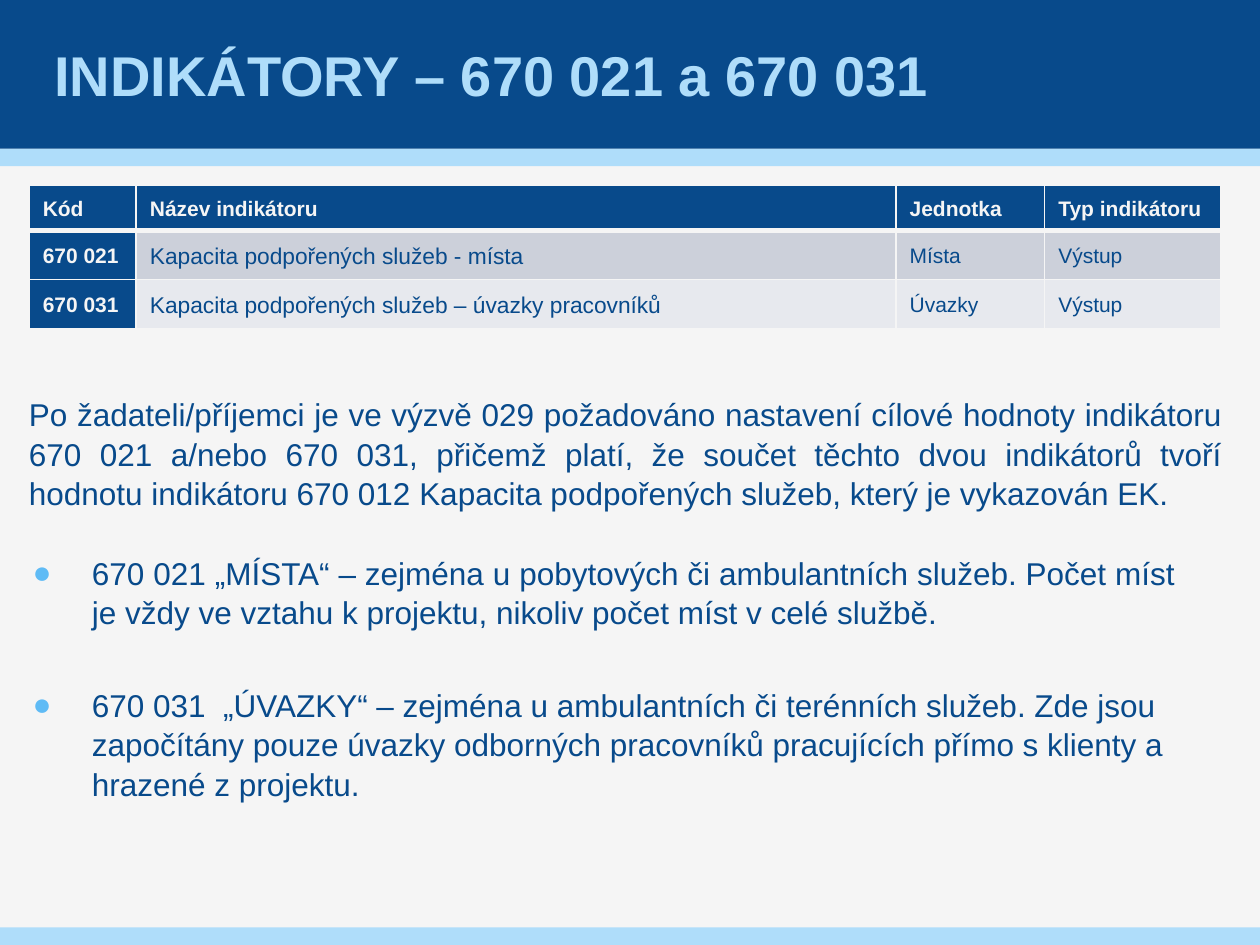
"""Builds the slide on indicators 670 021 and 670 031."""
from lxml import etree
from pptx import Presentation
from pptx import util as u
from pptx.dml.color import RGBColor
from pptx.enum import shapes, text
from pptx.oxml import ns

NAVY = RGBColor(0x08, 0x4A, 0x8B)
SKY = RGBColor(0xAF, 0xDD, 0xFA)
BULLET = RGBColor(0x5F, 0xBB, 0xF5)
PAPER = RGBColor(0xF5, 0xF5, 0xF5)
BANDS = [RGBColor(0xCC, 0xD0, 0xDA), RGBColor(0xE7, 0xE9, 0xEE)]
WIDTH, HEIGHT = u.Inches(10), u.Inches(7.5)
HEADER, STRIPE = u.Inches(1.18), u.Inches(0.14)
MARGIN = u.Inches(0.23)


def write(frame, words, size=18, color=NAVY, bold=False, align=text.PP_ALIGN.LEFT,
          before=0, after=0, spacing=1.0, indent=0, hanging=0, bullet=None, first=True):
    """Writes one formatted paragraph into a text frame."""
    para = frame.paragraphs[0] if first else frame.add_paragraph()
    para.alignment, para.line_spacing = align, spacing
    para.space_before, para.space_after = u.Pt(before), u.Pt(after)
    props = para._p.get_or_add_pPr()
    props.set("marL", str(u.Inches(indent)))
    props.set("indent", str(-u.Inches(hanging)))
    if bullet:
        paint = etree.SubElement(props, ns.qn("a:buClr"))
        etree.SubElement(paint, ns.qn("a:srgbClr"), val=str(BULLET))
        etree.SubElement(props, ns.qn("a:buFont"), typeface="Arial")
        etree.SubElement(props, ns.qn("a:buChar"), char=bullet)
    span = para.add_run()
    span.text = words
    span.font.name, span.font.size, span.font.bold = "Arial", u.Pt(size), bold
    span.font.color.rgb = color


def set_margins(target, side=0):
    """Sets equal side margins and no margin above or below."""
    target.margin_left = target.margin_right = u.Inches(side)
    target.margin_top = target.margin_bottom = 0


deck = Presentation()
deck.slide_width, deck.slide_height = WIDTH, HEIGHT
page = deck.slides.add_slide(deck.slide_layouts[5])
page.background.fill.solid()
page.background.fill.fore_color.rgb = PAPER

for top, height, color in [(HEADER, STRIPE, SKY), (0, HEADER, NAVY), (HEIGHT - STRIPE, STRIPE, SKY)]:
    band = page.shapes.add_shape(shapes.MSO_SHAPE.RECTANGLE, 0, top, WIDTH, height)
    band.shadow.inherit = False
    band.fill.solid()
    band.fill.fore_color.rgb = color
    band.line.fill.background()

title = page.shapes.title
title.left, title.top, title.width, title.height = u.Inches(0.39), 0, u.Inches(9.21), HEADER
page.shapes._spTree.append(title._element)
set_margins(title.text_frame, 0.04)
title.text_frame.vertical_anchor = text.MSO_ANCHOR.MIDDLE
write(title.text_frame, "INDIKÁTORY – 670 021 a 670 031", size=32, color=SKY, bold=True)

rows = [
    ["Kód", "Název indikátoru", "Jednotka", "Typ indikátoru"],
    ["670 021", "Kapacita podpořených služeb - místa", "Místa", "Výstup"],
    ["670 031", "Kapacita podpořených služeb – úvazky pracovníků", "Úvazky", "Výstup"],
]
columns = [0.85, 6.03, 1.18, 1.4]
heights = [0.36, 0.39, 0.39]
table = page.shapes.add_table(len(rows), len(columns), MARGIN, u.Inches(1.47),
                              u.Inches(sum(columns)), u.Inches(sum(heights))).table
for column, width in zip(table.columns, columns):
    column.width = u.Inches(width)
for r, (words_in_row, height) in enumerate(zip(rows, heights)):
    table.rows[r].height = u.Inches(height)
    for c, words in enumerate(words_in_row):
        cell = table.cell(r, c)
        heading = r == 0 or c == 0
        set_margins(cell, 0.07)
        cell.vertical_anchor = text.MSO_ANCHOR.MIDDLE
        cell.fill.solid()
        cell.fill.fore_color.rgb = NAVY if heading else BANDS[r - 1]
        write(cell.text_frame, words, size=13 if c == 1 and r else 12, bold=heading,
              color=PAPER if heading else NAVY, before=3, after=6, spacing=1.1, indent=0.04)
        props = cell._tc.get_or_add_tcPr()
        for place, side in enumerate("LRTB"):
            thick = (r, side) in [(0, "B"), (1, "T")]
            border = etree.Element(ns.qn("a:ln" + side), w=str(u.Pt(3 if thick else 1)))
            paint = etree.SubElement(border, ns.qn("a:solidFill"))
            etree.SubElement(paint, ns.qn("a:srgbClr"), val=str(PAPER))
            props.insert(place, border)

intro = page.shapes.add_textbox(MARGIN, u.Inches(3.12), u.Inches(9.47), u.Inches(1.15))
points = page.shapes.add_textbox(u.Inches(0.26), u.Inches(4.38), u.Inches(9.07), u.Inches(2.98))
for box in (intro, points):
    box.text_frame.word_wrap = True
    set_margins(box.text_frame)

write(intro.text_frame,
      "Po žadateli/příjemci je ve výzvě 029 požadováno nastavení cílové hodnoty indikátoru "
      "670 021 a/nebo 670 031, přičemž platí, že součet těchto dvou indikátorů tvoří "
      "hodnotu indikátoru 670 012 Kapacita podpořených služeb, který je vykazován EK.",
      align=text.PP_ALIGN.JUSTIFY, after=12, spacing=1.05)
write(points.text_frame,
      "670 021 „MÍSTA“ – zejména u pobytových či ambulantních služeb. Počet míst "
      "je vždy ve vztahu k projektu, nikoliv počet míst v celé službě.",
      align=text.PP_ALIGN.JUSTIFY, after=24, spacing=1.05, indent=0.47, hanging=0.47, bullet="●")
write(points.text_frame,
      "670 031  „ÚVAZKY“ – zejména u ambulantních či terénních služeb. Zde jsou "
      "započítány pouze úvazky odborných pracovníků pracujících přímo s klienty "
      "a hrazené z projektu.",
      before=6, after=12, spacing=1.05, indent=0.47, hanging=0.47, bullet="●", first=False)

deck.save("out.pptx")
